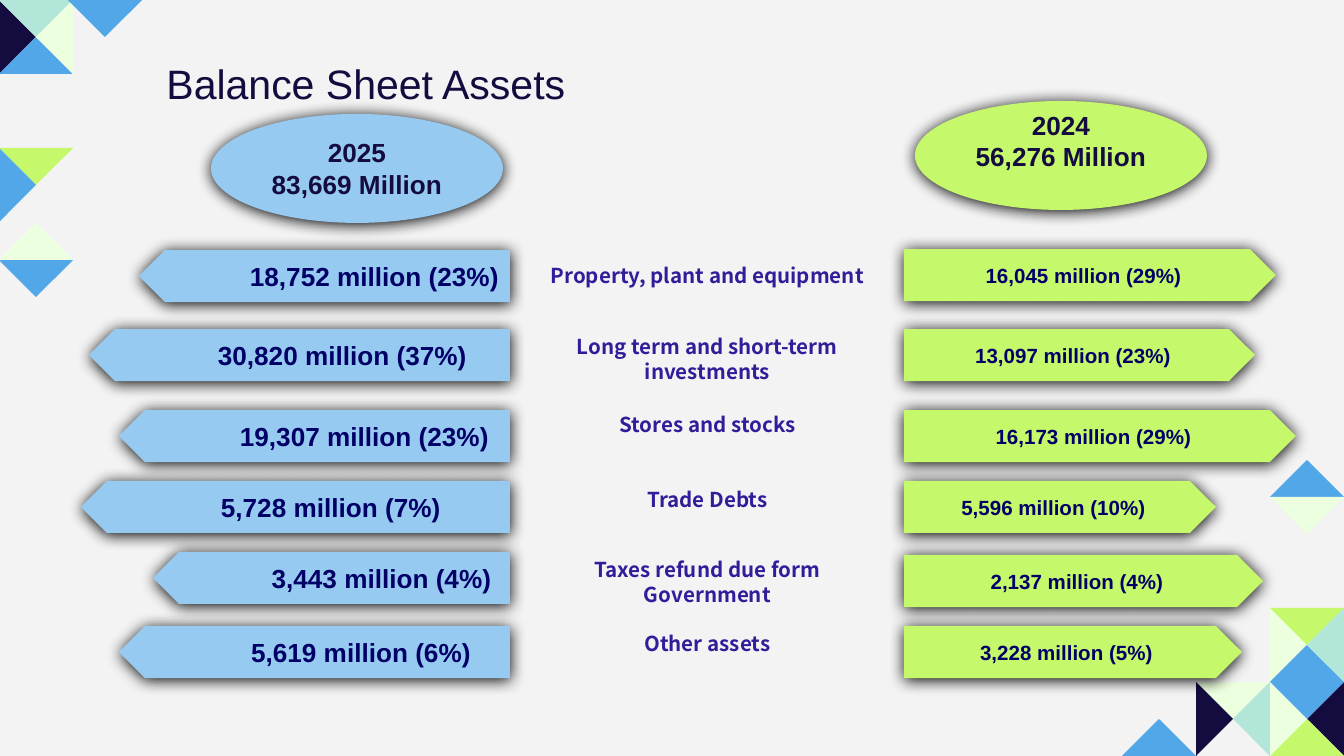
import pptx
import pptx.dml.color
import pptx.enum.shapes
import pptx.enum.text
import pptx.oxml
import pptx.oxml.ns
import pptx.util

RGB = pptx.dml.color.RGBColor
SHAPE = pptx.enum.shapes.MSO_SHAPE
ALIGN = pptx.enum.text.PP_ALIGN
ANCHOR = pptx.enum.text.MSO_ANCHOR
AUTO = pptx.enum.text.MSO_AUTO_SIZE

EMU_PER_PX = 9144000 / 1344
CELL = 74
BAR_H = 52
LEFT_EDGE, RIGHT_EDGE = 510, 904

GREY = RGB(0xF3, 0xF3, 0xF3)
DARK = RGB(0x14, 0x0C, 0x3F)
MINT = RGB(0xB2, 0xE6, 0xD8)
PALE = RGB(0xEC, 0xFF, 0xDE)
LIME = RGB(0xC6, 0xF8, 0x6B)
BLUE = RGB(0x51, 0xA7, 0xE8)
SKY = RGB(0x97, 0xCA, 0xF1)
NAVY = RGB(0x00, 0x00, 0x66)
VIOLET = RGB(0x31, 0x1D, 0x9A)

MOSAIC = [
    (-1, 0, {"left": DARK, "top": MINT, "bottom": BLUE, "right": PALE}),
    (68, 0, {"top": BLUE}),
    (-1, 148, {"top": LIME, "left": BLUE}),
    (-1, 186, {"bottom": PALE}),
    (-1, 260, {"top": BLUE}),
    (1270, 423, {"bottom": BLUE}),
    (1270, 497, {"top": PALE}),
    (1270, 608, {"left": PALE, "top": LIME, "bottom": BLUE, "right": MINT}),
    (1270, 682, {"right": DARK, "bottom": LIME, "top": BLUE, "left": PALE}),
    (1196, 682, {"top": PALE, "right": MINT, "left": DARK}),
    (1122, 682, {"bottom": BLUE}),
]

BARS_2025 = [
    (139, 250, 87, "18,752 million (23%)"),
    (89, 329, 73, "30,820 million (37%)"),
    (119, 410, 87, "19,307 million (23%)"),
    (81, 481, 58, "5,728 million (7%)"),
    (153, 552, 87, "3,443 million (4%)"),
    (119, 626, 80, "5,619 million (6%)"),
]

BARS_2024 = [
    (1276, 249, "16,045 million (29%)"),
    (1255, 329, "13,097 million (23%)"),
    (1296, 410, "16,173 million (29%)"),
    (1216, 481, "5,596 million (10%)"),
    (1263, 555, "2,137 million (4%)"),
    (1242, 626, "3,228 million (5%)"),
]

LABELS = [
    (258, 35, "Property, plant and equipment"),
    (329, 60, "Long term and short-term investments"),
    (407, 35, "Stores and stocks"),
    (482, 35, "Trade Debts"),
    (552, 60, "Taxes refund due form Government"),
    (626, 35, "Other assets"),
]


def px(n):
    """Turn pixels into EMU."""
    return pptx.util.Emu(round(n * EMU_PER_PX))


def add_run(p, text, size, color, font="Arial", bold=True, align=ALIGN.CENTER):
    """Add one formatted run to a paragraph."""
    p.alignment = align
    r = p.add_run()
    r.text = text
    r.font.size = pptx.util.Pt(size)
    r.font.name = font
    r.font.bold = bold
    r.font.color.rgb = color


def set_insets(tf, side, end):
    """Set equal side insets and equal top and bottom insets."""
    tf.margin_left = tf.margin_right = px(side)
    tf.margin_top = tf.margin_bottom = px(end)


def paint(sp, color):
    """Give a shape a plain fill without line or shadow."""
    sp.shadow.inherit = False
    sp.fill.solid()
    sp.fill.fore_color.rgb = color
    sp.line.fill.background()


def add_shadowed(slide, kind, x, y, w, h, color):
    """Add a filled preset shape with a soft black shadow."""
    sp = slide.shapes.add_shape(kind, px(x), px(y), px(w), px(h))
    paint(sp, color)
    effects = sp._element.spPr.find(pptx.oxml.ns.qn("a:effectLst"))
    effects.append(pptx.oxml.parse_xml(
        '<a:outerShdw %s blurRad="107950" dist="12700" dir="5400000" algn="ctr" '
        'rotWithShape="0"><a:srgbClr val="000000"/></a:outerShdw>'
        % pptx.oxml.ns.nsdecls("a")))
    tf = sp.text_frame
    tf.word_wrap = True
    tf.vertical_anchor = ANCHOR.MIDDLE
    return sp


def add_triangle(slide, x, y, side, color):
    """Fill the quarter of a square cell that lies on the given side."""
    x2, y2 = x + CELL, y + CELL
    start, end = {
        "top": ((x, y), (x2, y)),
        "right": ((x2, y), (x2, y2)),
        "bottom": ((x2, y2), (x, y2)),
        "left": ((x, y2), (x, y)),
    }[side]
    fb = slide.shapes.build_freeform(*start, scale=EMU_PER_PX)
    fb.add_line_segments([end, (x + CELL // 2, y + CELL // 2)], close=True)
    paint(fb.convert_to_shape(), color)


def add_bar(slide, x, y, w, color, text, size, indent=0, flip=False):
    """Add a pointed value bar, with its point on the left when flipped."""
    sp = add_shadowed(slide, SHAPE.PENTAGON, x, y, w, BAR_H, color)
    sp.adjustments[0] = 0.5
    if flip:
        sp._element.spPr.xfrm.set("flipH", "1")
    tf = sp.text_frame
    set_insets(tf, 9, 5)
    p = tf.paragraphs[0]
    p._p.get_or_add_pPr().set("marL", str(px(indent)))
    add_run(p, text, size, NAVY)


def add_total(slide, x, y, color, year, total, lift=0):
    """Add a year's total in an ellipse, with its text raised by an extra inset."""
    sp = add_shadowed(slide, SHAPE.OVAL, x, y, 292, 109, color)
    tf = sp.text_frame
    tf.margin_bottom = px(7 + lift)
    add_run(tf.paragraphs[0], year, 14, DARK)
    add_run(tf.add_paragraph(), total, 14, DARK)


def add_label(slide, y, h, text):
    """Add a centred asset name between the two columns of bars."""
    sp = slide.shapes.add_textbox(px(532), px(y), px(351), px(h))
    tf = sp.text_frame
    tf.word_wrap = True
    tf.auto_size = AUTO.SHAPE_TO_FIT_TEXT
    set_insets(tf, 9, 5)
    add_run(tf.paragraphs[0], text, 11, VIOLET, "Noto Sans CJK SC")


def set_title(slide, text):
    """Move and fill the title placeholder."""
    sp = slide.shapes.title
    sp.left, sp.top, sp.width, sp.height = px(153), px(52), px(433), px(63)
    tf = sp.text_frame
    tf.word_wrap = False
    tf.auto_size = AUTO.NONE
    tf.vertical_anchor = ANCHOR.TOP
    add_run(tf.paragraphs[0], text, 22, DARK, bold=False, align=ALIGN.LEFT)


def main():
    """Build the balance sheet slide and save it."""
    prs = pptx.Presentation()
    prs.slide_width, prs.slide_height = px(1344), px(756)
    slide = prs.slides.add_slide(prs.slide_layouts[5])
    slide.background.fill.solid()
    slide.background.fill.fore_color.rgb = GREY
    for x, y, sides in MOSAIC:
        for side, color in sides.items():
            add_triangle(slide, x, y, side, color)
    for x, y, indent, text in BARS_2025:
        add_bar(slide, x, y, LEFT_EDGE - x, SKY, text, 14, indent, flip=True)
    for end, y, text in BARS_2024:
        add_bar(slide, RIGHT_EDGE, y, end - RIGHT_EDGE, LIME, text, 11)
    for y, h, text in LABELS:
        add_label(slide, y, h, text)
    set_title(slide, "Balance Sheet Assets")
    add_total(slide, 211, 114, SKY, "2025", "83,669 Million")
    add_total(slide, 915, 101, LIME, "2024", "56,276 Million", lift=30)
    prs.save("out.pptx")


if __name__ == "__main__":
    main()
